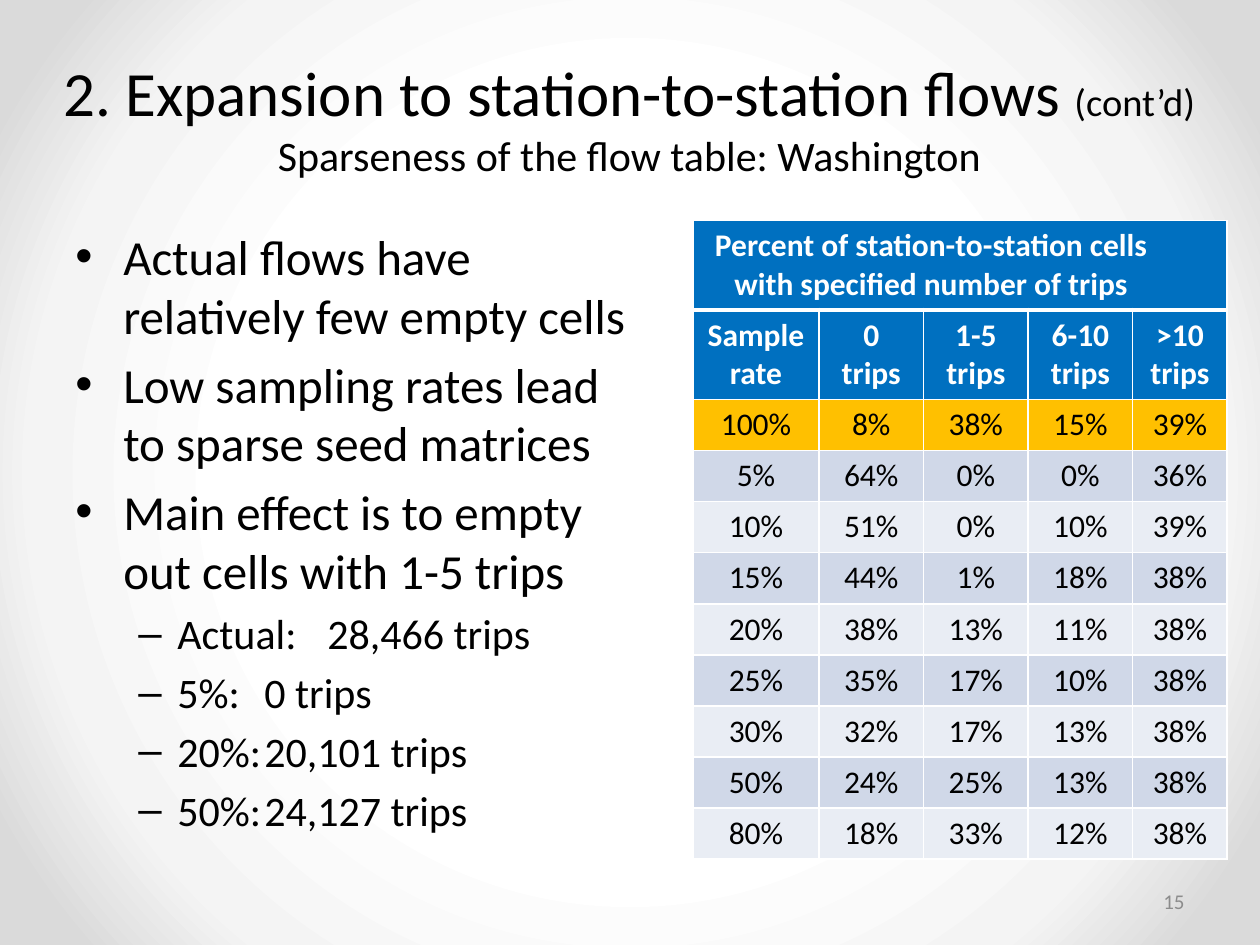
from dataclasses import dataclass

from lxml import etree
from pptx import Presentation
from pptx.dml.color import RGBColor
from pptx.enum import text
from pptx.oxml import parse_xml
from pptx.oxml.ns import nsdecls, qn
from pptx.util import Inches, Pt


@dataclass(frozen=True)
class Theme:
    font: str = "Calibri"
    ink: str = "000000"
    white: str = "FFFFFF"
    muted: str = "8C8C8C"
    header: str = "0070C0"
    highlight: str = "FFC000"
    bands: tuple = ("D0D8E8", "E9EDF4")
    backdrop: tuple = ((50, "FFFFFF"), (76, "F4F4F4"), (92, "DADADA"))
    title: int = 36
    aside: int = 22
    subtitle: int = 24
    levels: tuple = (28, 24)
    table: int = 18
    number: int = 12


@dataclass(frozen=True)
class Bullet:
    text: str
    level: int = 0


@dataclass(frozen=True)
class BulletStyle:
    mark: str
    left: float
    hang: float


THEME = Theme()
CENTER = text.PP_ALIGN.CENTER
BULLET_STYLES = (BulletStyle("•", 0.38, 0.38), BulletStyle("–", 0.81, 0.31))
BULLETS = (
    Bullet("Actual flows have relatively few empty cells"),
    Bullet("Low sampling rates lead to sparse seed matrices"),
    Bullet("Main effect is to empty out cells with 1-5 trips"),
    Bullet("Actual:\t28,466 trips", 1),
    Bullet("5%:\t0 trips", 1),
    Bullet("20%:\t20,101 trips", 1),
    Bullet("50%:\t24,127 trips", 1),
)
CAPTION = ("Percent of station-to-station cells", "with specified number of trips")
HEADINGS = ("Sample rate", "0 trips", "1-5 trips", "6-10 trips", ">10 trips")
# Sample rate, then share of cells in each trip class, in percent
FLOWS = (
    (100, 8, 38, 15, 39),
    (5, 64, 0, 0, 36),
    (10, 51, 0, 10, 39),
    (15, 44, 1, 18, 38),
    (20, 38, 13, 11, 38),
    (25, 35, 17, 10, 38),
    (30, 32, 17, 13, 38),
    (50, 24, 25, 13, 38),
    (80, 18, 33, 12, 38),
)
COL_WIDTHS = (1, 0.83, 0.83, 0.83, 0.75)
HEADER_HEIGHT, DATA_HEIGHT = 0.71, 3.65 / len(FLOWS)


def write(p, content: str, *, size: float, color: str = THEME.ink,
          bold: bool = False, align=None) -> None:
    """Add one formatted run to a paragraph."""
    r = p.add_run()
    r.text = content
    r.font.name, r.font.size, r.font.bold = THEME.font, Pt(size), bold
    r.font.color.rgb = RGBColor.from_string(color)
    if align is not None:
        p.alignment = align


def add_box(slide, left: float, top: float, width: float, height: float,
            anchor=text.MSO_ANCHOR.TOP):
    sp = slide.shapes.add_textbox(*map(Inches, (left, top, width, height)))
    tf = sp.text_frame
    tf.word_wrap, tf.vertical_anchor = True, anchor
    return tf


def set_backdrop(slide) -> None:
    stops = "".join(f'<a:gs pos="{pos * 1000}"><a:srgbClr val="{color}"/></a:gs>'
                    for pos, color in THEME.backdrop)
    slide.background.fill.solid()
    solid = slide.element.find(".//" + qn("p:bgPr") + "/" + qn("a:solidFill"))
    solid.getparent().replace(solid, parse_xml(
        f'<a:gradFill {nsdecls("a")} rotWithShape="1"><a:gsLst>{stops}</a:gsLst>'
        '<a:path path="circle"><a:fillToRect l="50000" t="50000" r="50000" b="50000"/>'
        '</a:path></a:gradFill>'))


def add_bullet(p, bullet: Bullet, first: bool) -> None:
    style, size = BULLET_STYLES[bullet.level], THEME.levels[bullet.level]
    p.level = bullet.level
    pPr = p._p.get_or_add_pPr()
    pPr.set("marL", str(Inches(style.left)))
    pPr.set("indent", str(-Inches(style.hang)))
    etree.SubElement(pPr, qn("a:buFont")).set("typeface", "Arial")
    etree.SubElement(pPr, qn("a:buChar")).set("char", style.mark)
    p.space_before = Pt(0 if first else 0.2 * size)
    write(p, bullet.text, size=size)


def style_cell(cell, fill: str, top: float = 1, bottom: float = 1) -> None:
    tcPr = cell._tc.get_or_add_tcPr()
    for side, width in (("L", 1), ("R", 1), ("T", top), ("B", bottom)):
        ln = etree.SubElement(tcPr, qn(f"a:ln{side}"), w=str(Pt(width)))
        color = etree.SubElement(etree.SubElement(ln, qn("a:solidFill")), qn("a:srgbClr"))
        color.set("val", THEME.white)
    cell.fill.solid()
    cell.fill.fore_color.rgb = RGBColor.from_string(fill)


def add_flow_table(slide) -> None:
    heights = (HEADER_HEIGHT,) * 2 + (DATA_HEIGHT,) * len(FLOWS)
    frame = slide.shapes.add_table(len(heights), len(COL_WIDTHS), Inches(5.5), Inches(1.75),
                                   Inches(sum(COL_WIDTHS)), Inches(sum(heights)))
    table = frame.table
    table.first_row = table.horz_banding = False
    for column, width in zip(table.columns, COL_WIDTHS):
        column.width = Inches(width)
    for row, height in zip(table.rows, heights):
        row.height = Inches(height)

    # Caption across all columns, its first line set left of centre
    head = {"size": THEME.table, "color": THEME.white, "bold": True, "align": CENTER}
    for cell in table.rows[0].cells:
        style_cell(cell, THEME.header, bottom=3)
    caption = table.cell(0, 0)
    caption.merge(table.cell(0, len(COL_WIDTHS) - 1))
    tf = caption.text_frame
    for p, line in zip((tf.paragraphs[0], tf.add_paragraph()), CAPTION):
        write(p, line, **head)
    tf.paragraphs[0]._p.get_or_add_pPr().set("marR", str(Inches(0.46)))

    # Column headings
    for cell, heading in zip(table.rows[1].cells, HEADINGS):
        style_cell(cell, THEME.header, top=3)
        write(cell.text_frame.paragraphs[0], heading, **head)

    # Full data highlighted, samples banded
    for i, values in enumerate(FLOWS):
        fill = THEME.bands[(i - 1) % 2] if i else THEME.highlight
        for cell, value in zip(table.rows[i + 2].cells, values):
            style_cell(cell, fill)
            write(cell.text_frame.paragraphs[0], f"{value}%", size=THEME.table, align=CENTER)


def main() -> None:
    prs = Presentation()
    prs.slide_width, prs.slide_height = Inches(10), Inches(7.5)
    slide = prs.slides.add_slide(prs.slide_layouts[6])
    set_backdrop(slide)

    # Title and subtitle
    p = add_box(slide, 0.33, 0.3, 9.33, 1.25, text.MSO_ANCHOR.MIDDLE).paragraphs[0]
    write(p, "2. Expansion to station-to-station flows ", size=THEME.title, align=CENTER)
    write(p, "(cont’d)", size=THEME.aside)
    p.add_line_break()
    write(p, "Sparseness of the flow table: Washington", size=THEME.subtitle)

    # Findings
    tf = add_box(slide, 0.5, 1.75, 4.75, 5.17)
    for i, bullet in enumerate(BULLETS):
        add_bullet(tf.add_paragraph() if i else tf.paragraphs[0], bullet, first=i == 0)

    # Slide number
    tf = add_box(slide, 7.17, 6.95, 2.33, 0.4, text.MSO_ANCHOR.MIDDLE)
    write(tf.paragraphs[0], "15", size=THEME.number, color=THEME.muted,
          align=text.PP_ALIGN.RIGHT)

    add_flow_table(slide)
    prs.save("out.pptx")


if __name__ == "__main__":
    main()
